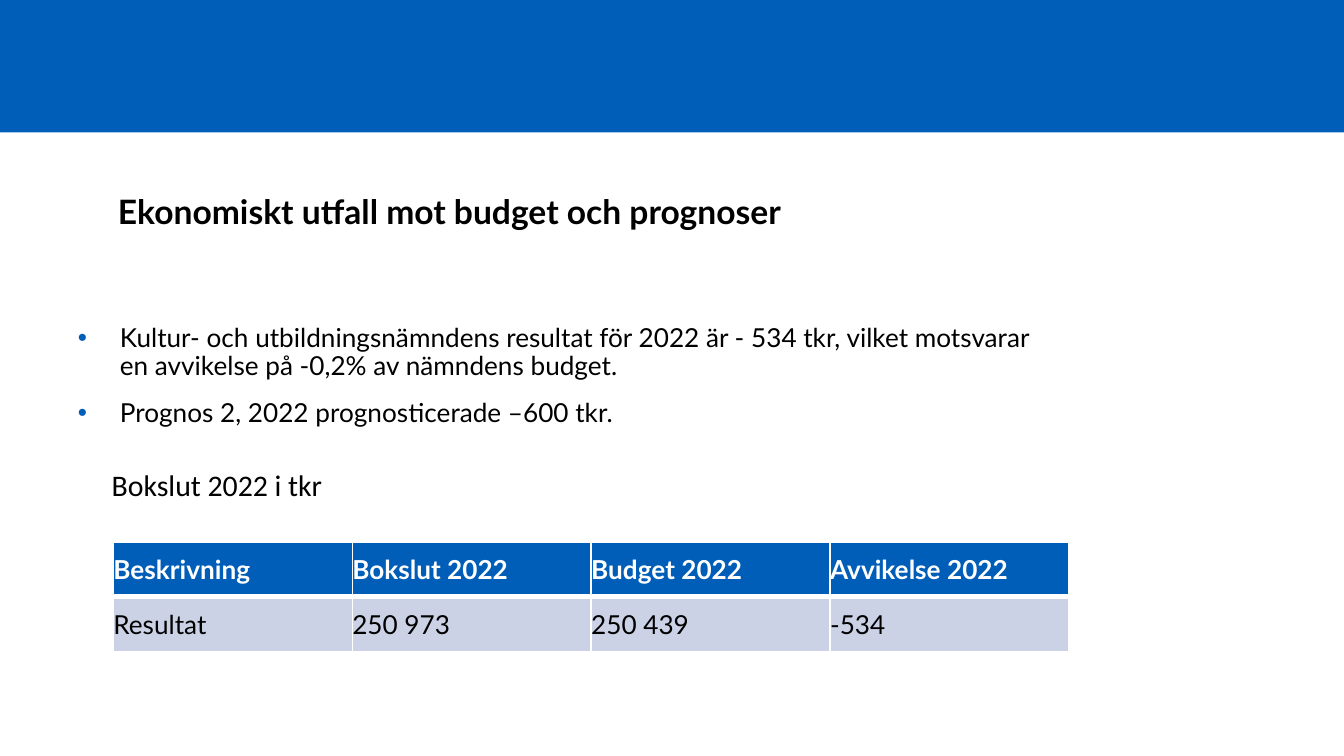
from dataclasses import dataclass

import pptx
import pptx.dml.color
import pptx.enum.shapes
import pptx.enum.text
import pptx.oxml
import pptx.oxml.ns
import pptx.util
from pptx.dml.color import RGBColor
from pptx.util import Pt

BLUE = RGBColor(0x00, 0x5E, 0xB8)
PALE_BLUE = RGBColor(0xCC, 0xD2, 0xE6)
BLACK = RGBColor(0x00, 0x00, 0x00)
WHITE = RGBColor(0xFF, 0xFF, 0xFF)

SLIDE_WIDTH, SLIDE_HEIGHT = 720, 405
BULLET_INDENT = 22.5
COLUMN_WIDTH, ROW_HEIGHT = 128, 29.25


@dataclass(frozen=True)
class Box:
    left: float
    top: float
    width: float
    height: float


@dataclass(frozen=True)
class TableRow:
    texts: tuple[str, ...]
    fill: RGBColor
    color: RGBColor
    bold: bool
    top_border: float
    bottom_border: float


BULLETS = (
    "Kultur- och utbildningsnämndens resultat för 2022 är - 534 tkr, vilket motsvarar "
    "en avvikelse på -0,2% av nämndens budget.",
    "Prognos 2, 2022 prognosticerade –600 tkr.",
)

RESULT_ROWS = (
    TableRow(("Beskrivning", "Bokslut 2022", "Budget 2022", "Avvikelse 2022"),
             BLUE, WHITE, True, 1, 3),
    TableRow(("Resultat", "250 973", "250 439", "-534"),
             PALE_BLUE, BLACK, False, 3, 1),
)


def place(shape, box: Box) -> None:
    shape.left, shape.top = Pt(box.left), Pt(box.top)
    shape.width, shape.height = Pt(box.width), Pt(box.height)


def style_font(paragraph, size: float, color: RGBColor, bold: bool = False,
               name: str = "Lato") -> None:
    for run in paragraph.runs:
        run.font.name = name
        run.font.size = Pt(size)
        run.font.bold = bold
        run.font.color.rgb = color


def add_bullet(paragraph, color: RGBColor) -> None:
    properties = paragraph._p.get_or_add_pPr()
    properties.set("marL", str(Pt(BULLET_INDENT)))
    properties.set("indent", str(-Pt(BULLET_INDENT)))
    namespace = pptx.oxml.ns.nsdecls("a")
    for xml in (
        f'<a:buClr {namespace}><a:srgbClr val="{color}"/></a:buClr>',
        f'<a:buFont {namespace} typeface="Arial"/>',
        f'<a:buChar {namespace} char="•"/>',
    ):
        properties.append(pptx.oxml.parse_xml(xml))


def set_border(cell, side: str, width: float) -> None:
    """Draw a white border on side L, R, T or B; call before filling the cell."""
    cell._tc.get_or_add_tcPr().append(pptx.oxml.parse_xml(
        f'<a:ln{side} {pptx.oxml.ns.nsdecls("a")} w="{Pt(width)}">'
        f'<a:solidFill><a:srgbClr val="{WHITE}"/></a:solidFill></a:ln{side}>'))


def add_banner(slide) -> None:
    banner = slide.shapes.add_shape(
        pptx.enum.shapes.MSO_SHAPE.RECTANGLE, 0, 0, Pt(SLIDE_WIDTH), Pt(71))
    banner.shadow.inherit = False
    banner.fill.solid()
    banner.fill.fore_color.rgb = BLUE
    banner.line.fill.background()
    slide.shapes._spTree.insert(2, banner._element)


def fill_title(title) -> None:
    place(title, Box(56, 95, 478, 33))
    frame = title.text_frame
    frame.text = "Ekonomiskt utfall mot budget och prognoser"
    frame.auto_size = pptx.enum.text.MSO_AUTO_SIZE.NONE
    frame.vertical_anchor = pptx.enum.text.MSO_ANCHOR.BOTTOM
    heading = frame.paragraphs[0]
    heading.alignment = pptx.enum.text.PP_ALIGN.LEFT
    heading.line_spacing = 0.9
    style_font(heading, 18, BLACK, bold=True)


def fill_body(body) -> None:
    place(body, Box(34.5, 170.5, 526, 134.5))
    frame = body.text_frame
    frame.text = "\n".join(BULLETS)
    frame.auto_size = pptx.enum.text.MSO_AUTO_SIZE.NONE
    for index, paragraph in enumerate(frame.paragraphs):
        add_bullet(paragraph, BLUE)
        paragraph.line_spacing = 0.9
        paragraph.space_before = Pt(10 if index else 0)
        style_font(paragraph, 14, BLACK)


def add_caption(slide) -> None:
    caption = slide.shapes.add_textbox(Pt(52.75), Pt(246.5), Pt(142.5), Pt(26.5))
    frame = caption.text_frame
    frame.word_wrap = True
    frame.text = "Bokslut 2022 i tkr"
    style_font(frame.paragraphs[0], 16, BLACK, name="Calibri")


def fill_cell(cell, text: str, row: TableRow) -> None:
    for side, width in (("L", 1), ("R", 1),
                        ("T", row.top_border), ("B", row.bottom_border)):
        set_border(cell, side, width)
    cell.fill.solid()
    cell.fill.fore_color.rgb = row.fill
    cell.margin_left = cell.margin_right = cell.margin_top = cell.margin_bottom = 0
    cell.vertical_anchor = pptx.enum.text.MSO_ANCHOR.MIDDLE
    cell.text_frame.text = text
    style_font(cell.text_frame.paragraphs[0], 14, row.color, row.bold)


def add_result_table(slide) -> None:
    column_count = len(RESULT_ROWS[0].texts)
    table = slide.shapes.add_table(
        len(RESULT_ROWS), column_count, Pt(60.75), Pt(290.5),
        Pt(COLUMN_WIDTH * column_count), Pt(ROW_HEIGHT * len(RESULT_ROWS))).table
    for row_index, row in enumerate(RESULT_ROWS):
        for column_index, text in enumerate(row.texts):
            fill_cell(table.cell(row_index, column_index), text, row)


def main() -> None:
    presentation = pptx.Presentation()
    presentation.slide_width = Pt(SLIDE_WIDTH)
    presentation.slide_height = Pt(SLIDE_HEIGHT)
    slide = presentation.slides.add_slide(presentation.slide_layouts[1])
    add_banner(slide)
    fill_title(slide.shapes.title)
    fill_body(slide.placeholders[1])
    add_caption(slide)
    add_result_table(slide)
    presentation.save("out.pptx")


if __name__ == "__main__":
    main()
